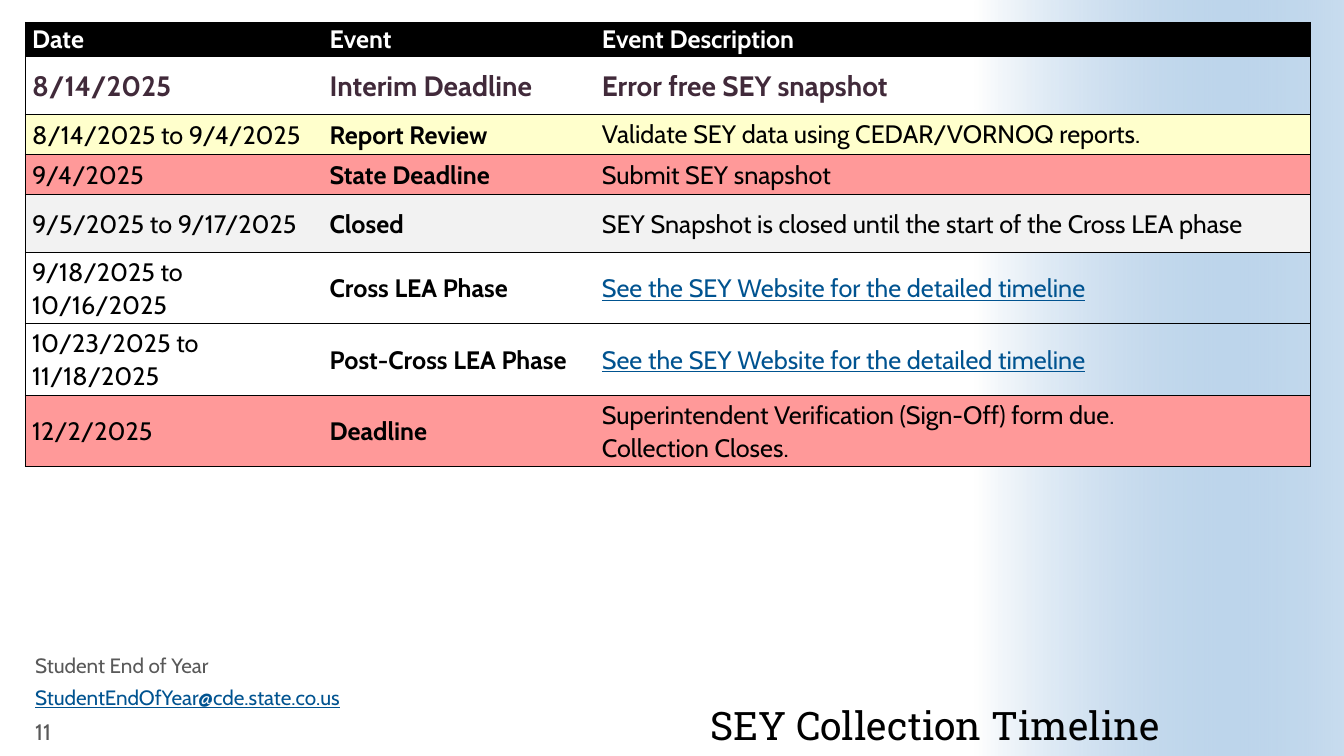
from lxml.etree import SubElement
from pptx import Presentation
from pptx.dml.color import RGBColor
from pptx.enum.shapes import MSO_SHAPE
from pptx.enum.text import MSO_ANCHOR, PP_ALIGN
from pptx.oxml.ns import qn
from pptx.util import Inches, Pt


def style(para, size, color, bold=False, line=False, face="Cabin"):
    """Format every run of a paragraph; line underlines it."""
    for run in para.runs:
        font = run.font
        font.name, font.size = face, Pt(size)
        font.bold, font.underline = bold, line
        font.color.rgb = RGBColor.from_string(color)


def edge(cell, side, shown):
    """Draw a thin black border on one side of a cell, or hide it."""
    line = SubElement(cell._tc.get_or_add_tcPr(), qn("a:ln" + side), w="6350")
    if shown:
        fill = SubElement(line, qn("a:solidFill"))
        SubElement(fill, qn("a:srgbClr"), val="000000")
    else:
        SubElement(line, qn("a:noFill"))


deck = Presentation()
deck.slide_width, deck.slide_height = Inches(13.33), Inches(7.5)
slide = deck.slides.add_slide(deck.slide_layouts[6])

# Fading band on the right
band = slide.shapes.add_shape(MSO_SHAPE.RECTANGLE, Inches(7.75), Inches(1.92),
                              Inches(7.5), Inches(3.66))
band.rotation = 270
band.shadow.inherit = False
band.line.fill.background()
band.fill.gradient()
band.fill.gradient_angle = 270
for stop, color in zip(band.fill.gradient_stops, ("FFFFFF", "488BC9")):
    stop.color.rgb = RGBColor.from_string(color)
tint = band._element.spPr.findall(".//" + qn("a:srgbClr"))[-1]
SubElement(tint, qn("a:alpha"), val="30000")

# Timeline table: height, fill, cell texts
link = "See the SEY Website for the detailed timeline"
rows = [
    (0.34, "000000", "Date", "Event", "Event Description"),
    (0.57, None, "8/14/2025", "Interim Deadline", "Error free SEY snapshot"),
    (0.4, "FFFFCC", "8/14/2025 to 9/4/2025", "Report Review",
     "Validate SEY data using CEDAR/VORNOQ reports."),
    (0.4, "FF9999", "9/4/2025", "State Deadline", "Submit SEY snapshot"),
    (0.57, "F2F2F2", "9/5/2025 to 9/17/2025", "Closed",
     "SEY Snapshot is closed until the start of the Cross LEA phase"),
    (0.71, None, "9/18/2025 to 10/16/2025", "Cross LEA Phase", link),
    (0.71, None, "10/23/2025 to 11/18/2025", "Post-Cross LEA Phase", link),
    (0.71, "FF9999", "12/2/2025", "Deadline",
     "Superintendent Verification (Sign-Off) form due.\vCollection Closes."),
]
widths = (2.95, 2.7, 7.1)
table = slide.shapes.add_table(len(rows), len(widths), Inches(0.25), Inches(0.22),
                               Inches(12.75), Inches(4.41)).table
for col, width in zip(table.columns, widths):
    col.width = Inches(width)

for r, (height, fill, *texts) in enumerate(rows):
    table.rows[r].height = Inches(height)
    for c, text in enumerate(texts):
        cell = table.cell(r, c)
        cell.margin_left = cell.margin_right = Inches(0.07)
        cell.margin_top = cell.margin_bottom = 0
        cell.vertical_anchor = MSO_ANCHOR.MIDDLE if r else MSO_ANCHOR.TOP
        for side, shown in (("L", c == 0), ("R", c == 2), ("T", True), ("B", True)):
            edge(cell, side, shown)
        if fill:
            cell.fill.solid()
            cell.fill.fore_color.rgb = RGBColor.from_string(fill)
        else:
            cell.fill.background()
        para = cell.text_frame.paragraphs[0]
        para.text = text
        if (r, c) != (2, 2):
            para.line_spacing = 1.07
        if r == 0:
            style(para, 18, "FFFFFF", True)
        elif r == 1:
            style(para, 20, "412A3A", True)
        elif text == link:
            style(para, 18, "005390", line=True)
        else:
            style(para, 18, "000000", c == 1)

# Title and footer
title = slide.shapes.add_textbox(Inches(4.26), Inches(6.45), Inches(7.24), Inches(0.98))
frame = title.text_frame
frame.word_wrap = True
frame.vertical_anchor = MSO_ANCHOR.BOTTOM
frame.margin_left = frame.margin_right = frame.margin_top = frame.margin_bottom = 0
frame.text = "SEY Collection Timeline"
head = frame.paragraphs[0]
head.alignment = PP_ALIGN.RIGHT
head.line_spacing = 0.9
style(head, 28, "000000", face="Roboto Slab")

footer = [
    (6.47, 3.89, "Student End of Year", 14.8, "595959", 0.8, MSO_ANCHOR.TOP),
    (6.79, 3.89, "StudentEndOfYear@cde.state.co.us", 14.8, "005390", 0.8, MSO_ANCHOR.TOP),
    (7.1, 0.85, "11", 16, "595959", 1.0, MSO_ANCHOR.MIDDLE),
]
for top, width, text, size, color, space, anchor in footer:
    box = slide.shapes.add_textbox(Inches(0.25), Inches(top), Inches(width), Inches(0.31))
    frame = box.text_frame
    frame.word_wrap = True
    frame.vertical_anchor = anchor
    frame.text = text
    para = frame.paragraphs[0]
    para.line_spacing = space
    style(para, size, color, line="@" in text)

deck.save("out.pptx")
